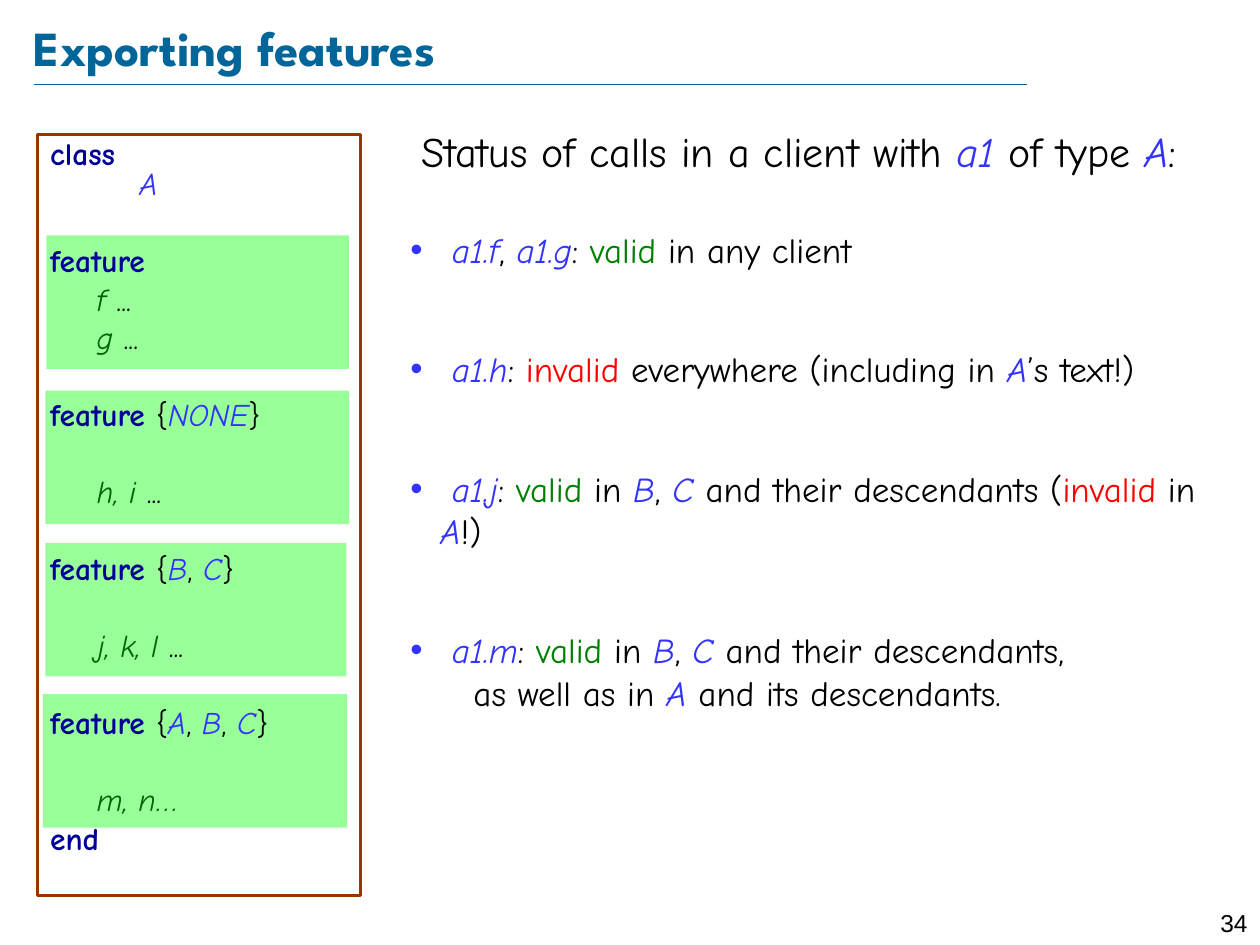
from lxml import etree
from pptx import Presentation
from pptx import util as u
from pptx.dml.color import RGBColor
from pptx.enum import shapes, text
from pptx.oxml.ns import qn

COLOURS = {
    "title": "006699", "black": "000000", "keyword": "000099", "type": "3333FF",
    "member": "006400", "valid": "008000", "invalid": "FF0000",
    "panel": "99FF99", "frame": "993300",
}
STYLES = {
    "plain": {},
    "keyword": {"colour": "keyword", "bold": True},
    "type": {"colour": "type", "italic": True},
    "member": {"colour": "member", "italic": True},
    "valid": {"colour": "valid"},
    "invalid": {"colour": "invalid"},
}


def colour_of(name):
    return RGBColor.from_string(COLOURS[name])


def write(paragraph, words, size=18, font="Comic Neue", colour="black", bold=False, italic=False):
    """Append words to the paragraph; a newline becomes a line break."""
    for index, line in enumerate(words.split("\n")):
        if index:
            paragraph.add_line_break()
        run = paragraph.add_run()
        run.text = line
        run.font.size = u.Pt(size)
        run.font.name = font
        run.font.bold = bold
        run.font.italic = italic
        run.font.color.rgb = colour_of(colour)


def write_runs(paragraph, runs, size):
    for words, style in runs:
        write(paragraph, words, size=size, **STYLES[style])


def set_indent(paragraph, left, first=0, bullet=None, tab=None):
    properties = paragraph._p.get_or_add_pPr()
    properties.set("marL", str(u.Pt(left)))
    properties.set("indent", str(u.Pt(first)))
    if bullet:
        etree.SubElement(properties, qn("a:buFont"), typeface="Arial")
        etree.SubElement(properties, qn("a:buChar"), char=bullet)
    if tab:
        tabs = etree.SubElement(properties, qn("a:tabLst"))
        etree.SubElement(tabs, qn("a:tab"), pos=str(u.Pt(tab)), algn="l")


class SlideBuilder:
    def __init__(self, slide):
        self.slide = slide

    def rule(self, left, top, right):
        line = self.slide.shapes.add_connector(
            shapes.MSO_CONNECTOR.STRAIGHT, u.Pt(left), u.Pt(top), u.Pt(right), u.Pt(top))
        line.line.color.rgb = colour_of("title")
        line.line.width = u.Pt(0.25)
        etree.SubElement(line._element.spPr, qn("a:effectLst"))

    def box(self, left, top, width, height, fill=None, line=None):
        shape = self.slide.shapes.add_shape(
            shapes.MSO_SHAPE.RECTANGLE, *map(u.Pt, (left, top, width, height)))
        shape.shadow.inherit = False
        if fill:
            shape.fill.solid()
            shape.fill.fore_color.rgb = colour_of(fill)
        else:
            shape.fill.background()
        if line:
            shape.line.color.rgb = colour_of(line)
            shape.line.width = u.Pt(1.5)
        else:
            shape.line.fill.background()
        frame = shape.text_frame
        frame.word_wrap = True
        frame.vertical_anchor = text.MSO_ANCHOR.TOP
        return frame

    def text_box(self, left, top, width, height):
        shape = self.slide.shapes.add_textbox(*map(u.Pt, (left, top, width, height)))
        shape.text_frame.word_wrap = True
        return shape.text_frame

    def paragraphs(self, frame, count, line_spacing):
        """Yield the given number of left-aligned paragraphs of the frame."""
        for index in range(count):
            paragraph = frame.add_paragraph() if index else frame.paragraphs[0]
            paragraph.alignment = text.PP_ALIGN.LEFT
            paragraph.line_spacing = line_spacing
            yield paragraph

    def code(self, frame, lines):
        """Write (space before, indent, runs) lines of class text."""
        for paragraph, (space, indent, runs) in zip(
                self.paragraphs(frame, len(lines), 0.81), lines):
            paragraph.space_before = u.Pt(space)
            set_indent(paragraph, indent)
            write_runs(paragraph, runs, 18)

    def bullets(self, frame, items, gap):
        for index, (paragraph, runs) in enumerate(
                zip(self.paragraphs(frame, len(items), 1.01), items)):
            paragraph.space_before = u.Pt(gap if index else 0)
            set_indent(paragraph, 17, -17, bullet="•", tab=36)
            write_runs(paragraph, [(" ", "type"), *runs], 20)


def export_clause(*clients):
    """Runs of a feature clause header with its list of clients."""
    runs = [("feature ", "keyword"), ("{", "plain")]
    for index, client in enumerate(clients):
        if index:
            runs.append((", ", "plain"))
        runs.append((client, "type"))
    return runs + [("}", "plain")]


CLOSE, WIDE = 4.5, 26.5
MEMBER_INDENT, NAME_INDENT = 26.6, 51
DOTS = (" ...", "plain")
CLASS_TEXT = [
    (0, 0, [("class", "keyword")]),
    (0, NAME_INDENT, [("A", "type")]),
    (WIDE, 0, [("feature", "keyword")]),
    (CLOSE, MEMBER_INDENT, [("f", "member"), DOTS]),
    (CLOSE, MEMBER_INDENT, [("g", "member"), DOTS]),
    (WIDE, 0, export_clause("NONE")),
    (WIDE, MEMBER_INDENT, [("h, i", "member"), DOTS]),
    (WIDE, 0, export_clause("B", "C")),
    (WIDE, MEMBER_INDENT, [("j, k, l", "member"), DOTS]),
    (WIDE, 0, export_clause("A", "B", "C")),
    (WIDE, MEMBER_INDENT, [("m, n…", "member")]),
    (CLOSE, 0, [("end", "keyword")]),
]
COLON = (": ", "plain")
VALID_IN_B_C = [COLON, ("valid ", "valid"), ("in ", "plain"),
                ("B", "type"), (", ", "plain"), ("C", "type")]
CALLS = [
    [("a1.f", "type"), (", ", "plain"), ("a1.g", "type"), COLON,
     ("valid ", "valid"), ("in any client", "plain")],
    [("a1.h", "type"), COLON, ("invalid ", "invalid"),
     ("everywhere (including in ", "plain"), ("A", "type"), ("’s text!)", "plain")],
    [("a1.j", "type"), *VALID_IN_B_C, (" and their descendants (", "plain"),
     ("invalid ", "invalid"), ("in ", "plain"), ("A", "type"), ("!)", "plain")],
    [("a1.m", "type"), *VALID_IN_B_C, (" and their descendants,\n\tas well as in ", "plain"),
     ("A", "type"), (" and its descendants.", "plain")],
]
HEADING = [("Status of calls in a client with ", "plain"), ("a1 ", "type"),
           ("of type ", "plain"), ("A", "type"), (":", "plain")]
PANELS = [(26.6, 134.6, 172.8), (26, 223.2, 173.5), (26, 310.3, 172), (24.5, 396.7, 174)]


def main():
    presentation = Presentation()
    presentation.slide_width, presentation.slide_height = u.Pt(720), u.Pt(540)
    builder = SlideBuilder(presentation.slides.add_slide(presentation.slide_layouts[6]))

    builder.rule(19.4, 48.2, 586.8)
    title = builder.text_box(19.4, 9.4, 625.7, 34.6)
    title.margin_left = title.margin_right = title.margin_top = title.margin_bottom = 0
    title.vertical_anchor = text.MSO_ANCHOR.MIDDLE
    write(title.paragraphs[0], "Exporting features",
          size=28, font="League Spartan", colour="title", bold=True)

    for left, top, width in PANELS:
        builder.box(left, top, width, 76.3, fill="panel")
    builder.code(builder.box(21.6, 77, 184.3, 434.9, line="frame"), CLASS_TEXT)

    heading = builder.text_box(205.9, 76.3, 501.1, 28.8).paragraphs[0]
    heading.alignment = text.PP_ALIGN.CENTER
    heading.line_spacing = 0.69
    write_runs(heading, HEADING, 24)
    builder.bullets(builder.text_box(227.5, 126.7, 475.2, 352.8), CALLS, gap=44)

    number = builder.text_box(680.4, 515.5, 39.6, 17.3).paragraphs[0]
    number.alignment = text.PP_ALIGN.RIGHT
    write(number, "34", size=14, font="Arial")

    presentation.save("out.pptx")


if __name__ == "__main__":
    main()
